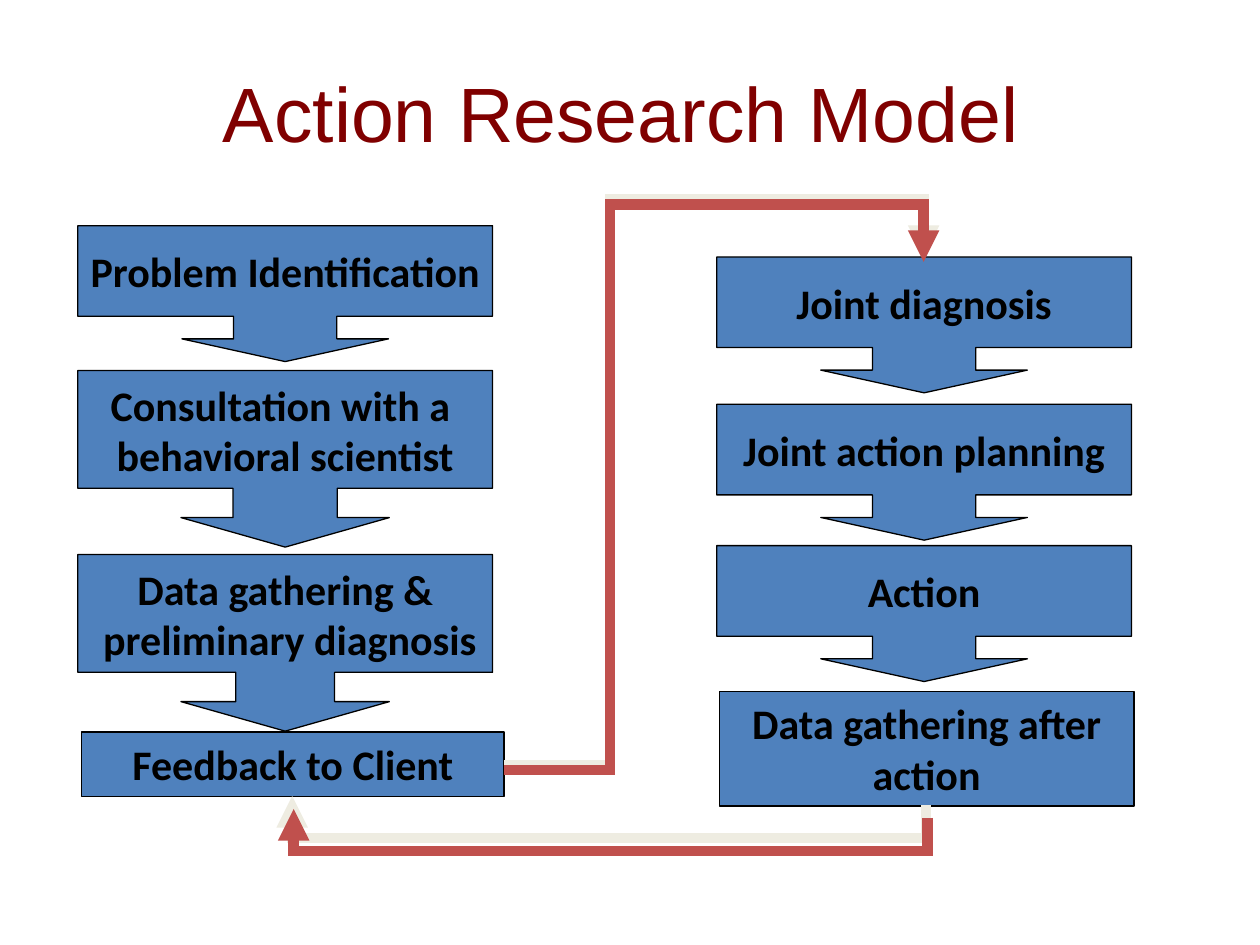
from lxml import etree
from pptx import Presentation
from pptx import util as u
from pptx.dml.color import RGBColor
from pptx.enum import shapes, text
from pptx.oxml.ns import qn

BLUE = RGBColor(0x4F, 0x81, 0xBD)
BLACK = RGBColor(0x00, 0x00, 0x00)
MAROON = RGBColor(0x80, 0x00, 0x00)
RED = RGBColor(0xC0, 0x50, 0x4D)
CREAM = RGBColor(0xEE, 0xEC, 0xE1)

STEP_WIDTH = 8.36
LOW, HIGH = 2.74, 3.56
LOW_ARROW = (0.76, 0.76, 0.167, 0.667)
HIGH_ARROW = (0.59, 0.59, 0.167, 0.667)
NARROW_ARROW = (0.56, 0.59, 0.167, 0.667)

LEFT_STEPS = [
    (0, LOW, LOW_ARROW, ["Problem Identification"]),
    (2.92, HIGH, HIGH_ARROW, ["Consultation with a ", "behavioral scientist"]),
    (6.63, HIGH, NARROW_ARROW, ["Data gathering &", " preliminary diagnosis"]),
]
RIGHT_STEPS = [
    (0, LOW, LOW_ARROW, ["Joint diagnosis"]),
    (2.97, LOW, LOW_ARROW, ["Joint action planning"]),
    (5.82, LOW, LOW_ARROW, ["Action"]),
]


def add_line(paragraph, words, font_name, size, color, bold):
    """Add one centred run to a paragraph."""
    paragraph.alignment = text.PP_ALIGN.CENTER
    run = paragraph.add_run()
    run.text = words
    run.font.name = font_name
    run.font.size = u.Pt(size)
    run.font.color.rgb = color
    run.font.bold = bold


def add_title(slide, left, top, width, height):
    """Place and format the title placeholder."""
    title = slide.shapes.title
    title.left, title.top = u.Cm(left), u.Cm(top)
    title.width, title.height = u.Cm(width), u.Cm(height)
    title.text_frame.vertical_anchor = text.MSO_ANCHOR.MIDDLE
    add_line(title.text_frame.paragraphs[0], "Action Research Model",
             "Arial", 44, MAROON, False)


def add_step(slide, kind, left, top, width, height, lines):
    """Draw one blue box with bold centred lines."""
    shape = slide.shapes.add_shape(
        kind, u.Cm(left), u.Cm(top), u.Cm(width), u.Cm(height))
    shape.shadow.inherit = False
    shape.fill.solid()
    shape.fill.fore_color.rgb = BLUE
    shape.line.color.rgb = BLACK
    shape.line.width = u.Pt(0.75)
    frame = shape.text_frame
    for index, words in enumerate(lines):
        paragraph = frame.add_paragraph() if index else frame.paragraphs[0]
        add_line(paragraph, words, "Calibri", 24, BLACK, True)
    return shape


def add_column(slide, left, top, steps):
    """Stack arrow callouts below the given corner."""
    for offset, height, arrow, lines in steps:
        callout = add_step(slide, shapes.MSO_SHAPE.DOWN_ARROW_CALLOUT,
                           left, top + offset, STEP_WIDTH, height, lines)
        for index, value in enumerate(arrow):
            callout.adjustments[index] = value
        callout.text_frame.word_wrap = False
        callout.text_frame.vertical_anchor = text.MSO_ANCHOR.MIDDLE


def add_last_step(slide, left, top, width, height, words):
    """Draw the plain box that closes a column."""
    shape = add_step(slide, shapes.MSO_SHAPE.RECTANGLE,
                     left, top, width, height, [words])
    shape.text_frame.word_wrap = True
    shape.text_frame.vertical_anchor = text.MSO_ANCHOR.TOP
    shape.text_frame.auto_size = text.MSO_AUTO_SIZE.SHAPE_TO_FIT_TEXT


def add_bent_arrow(slide, left, top, width, height, color, bends, rotation=0):
    """Draw an elbow arrow from the bottom left to the top right of its box."""
    connector = slide.shapes.add_connector(
        shapes.MSO_CONNECTOR.ELBOW, u.Cm(left), u.Cm(top + height),
        u.Cm(left + width), u.Cm(top))
    connector.line.color.rgb = color
    connector.line.width = u.Pt(6)
    properties = connector._element.spPr
    properties.find(qn("a:xfrm")).set("rot", str(rotation * 60000))
    geometry = properties.find(qn("a:prstGeom"))
    geometry.set("prst", f"bentConnector{len(bends) + 2}")
    guides = geometry.find(qn("a:avLst"))
    for number, bend in enumerate(bends, 1):
        etree.SubElement(guides, qn("a:gd"), name=f"adj{number}",
                         fmla=f"val {round(bend * 100000)}")
    line = properties.find(qn("a:ln"))
    etree.SubElement(line, qn("a:miter"), lim="800000")
    etree.SubElement(line, qn("a:tailEnd"), type="triangle")
    etree.SubElement(properties, qn("a:effectLst"))


def add_loop(slide, color, across_top, back_left, back_top):
    """Draw the arrow to the right column and the arrow back."""
    add_bent_arrow(slide, 10.16, across_top, 8.46, 10.24, color, [0.253, 1.113])
    add_bent_arrow(slide, back_left, back_top, 0.18, 12.78, color, [-3.69], 270)


def main():
    """Build and save the slide."""
    presentation = Presentation()
    presentation.slide_width = u.Cm(25.4)
    presentation.slide_height = u.Cm(19.05)
    slide = presentation.slides.add_slide(presentation.slide_layouts[5])
    add_title(slide, 1.73, 1.09, 21.59, 2.34)
    add_last_step(slide, 1.65, 14.76, 8.51, 1.3, "Feedback to Client")
    add_last_step(slide, 14.5, 13.94, STEP_WIDTH, 2.31,
                  "Data gathering after action")
    add_column(slide, 1.57, 4.55, LEFT_STEPS)
    add_column(slide, 14.45, 5.18, RIGHT_STEPS)
    add_loop(slide, CREAM, 5.18, 12.19, 9.75)
    add_loop(slide, RED, 5.28, 12.22, 10.01)
    presentation.save("out.pptx")


if __name__ == "__main__":
    main()
